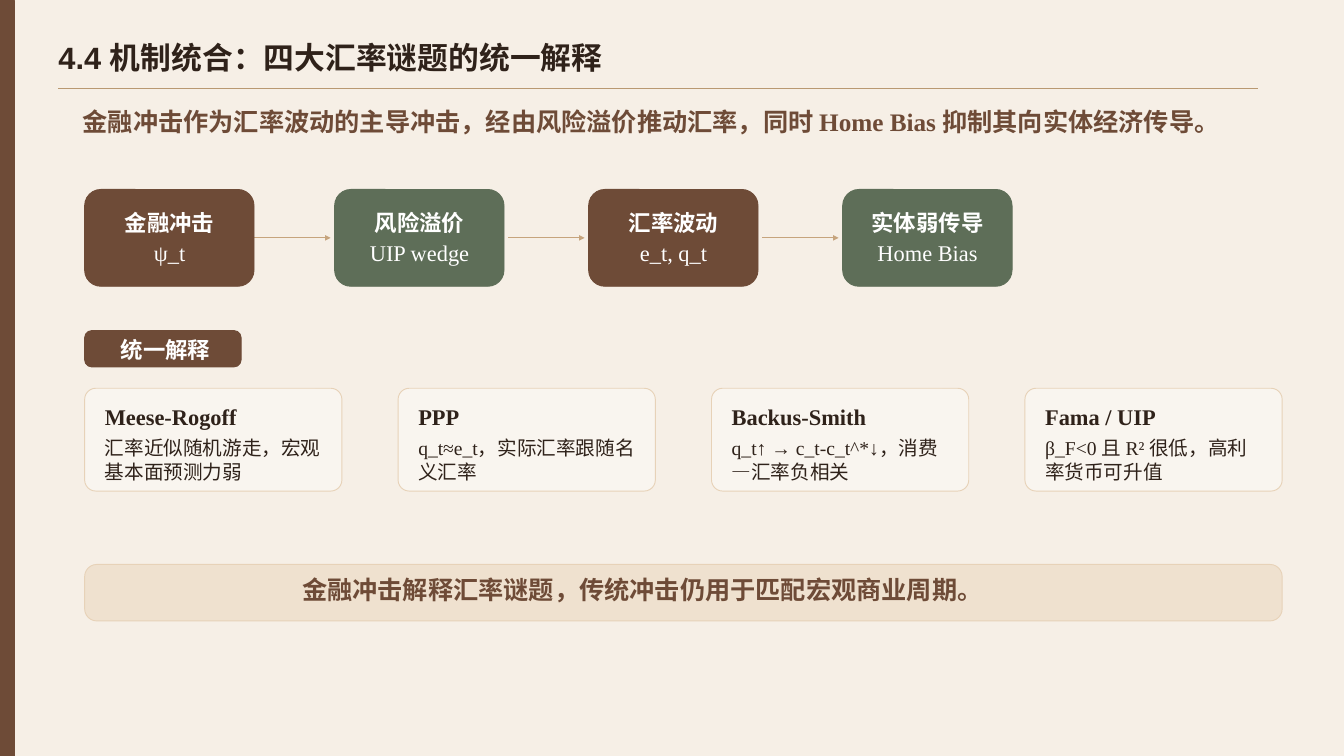
from pptx import Presentation
from pptx.dml.color import RGBColor
from pptx.enum.shapes import MSO_CONNECTOR, MSO_SHAPE
from pptx.enum.text import MSO_ANCHOR, PP_ALIGN
from pptx.oxml.ns import qn
from pptx.util import Inches, Pt
from lxml.etree import SubElement

BROWN = RGBColor(0x6E, 0x4B, 0x37)
GREEN = RGBColor(0x5E, 0x6E, 0x58)
INK = RGBColor(0x2F, 0x22, 0x1A)
WHITE = RGBColor(0xFF, 0xFF, 0xFF)
PAPER = RGBColor(0xF6, 0xEF, 0xE6)
CARD = RGBColor(0xF9, 0xF5, 0xEF)
SAND = RGBColor(0xEF, 0xE1, 0xCF)
EDGE = RGBColor(0xE7, 0xD2, 0xB8)
RULE = RGBColor(0xB9, 0x99, 0x72)
ARROW = RGBColor(0xC6, 0xA4, 0x7D)
SERIF = "Times New Roman"
CELL = 0.06  # inches in one grid column or row
LEFT, WIDE = 21, 297  # body margin and width in columns


def grid(*cells):
    return [Inches(n * CELL) for n in cells]


class Deck:
    def __init__(self):
        self.prs = Presentation()
        self.prs.slide_width, self.prs.slide_height = Inches(20), Inches(11.25)
        self.slide = self.prs.slides.add_slide(self.prs.slide_layouts[6])
        self.slide.background.fill.solid()
        self.slide.background.fill.fore_color.rgb = PAPER

    def box(self, x, y, w, h, fill, edge=None, round=None):
        kind = MSO_SHAPE.RECTANGLE if round is None else MSO_SHAPE.ROUNDED_RECTANGLE
        shape = self.slide.shapes.add_shape(kind, *grid(x, y, w, h))
        if round is not None:
            shape.adjustments[0] = round
        shape.shadow.inherit = False
        shape.fill.solid()
        shape.fill.fore_color.rgb = fill
        shape.line.color.rgb = edge or fill
        shape.line.width = Pt(1)

    def text(self, x, y, w, h, words, size, color, bold=False, font=SERIF,
             align=PP_ALIGN.LEFT, anchor=MSO_ANCHOR.MIDDLE, pad=(0, 0)):
        frame = self.slide.shapes.add_textbox(*grid(x, y, w, h)).text_frame
        frame.word_wrap = True
        frame.vertical_anchor = anchor
        frame.margin_left = frame.margin_right = Inches(pad[0])
        frame.margin_top = frame.margin_bottom = Inches(pad[1])
        para = frame.paragraphs[0]
        para.alignment = align
        run = para.add_run()
        run.text = words
        run.font.name, run.font.size, run.font.bold = font, Pt(size), bold
        run.font.color.rgb = color

    def line(self, x, y, end, color, width, head=False):
        line = self.slide.shapes.add_connector(
            MSO_CONNECTOR.STRAIGHT, *grid(x, y, end, y))
        line.line.color.rgb = color
        line.line.width = Pt(width)
        if head:
            SubElement(line.line._get_or_add_ln(), qn("a:tailEnd"), type="triangle")
        SubElement(line._element.spPr, qn("a:effectLst"))

    def node(self, x, y, w, h, fill, name, note):
        self.box(x, y, w, h, fill, round=0.167)
        self.text(x + 3.8, y + 5.5, w - 7.5, 5.2, name, 24, WHITE, True,
                  align=PP_ALIGN.CENTER)
        self.text(x + 3.8, y + 13.5, w - 7.5, 4.5, note, 24, WHITE,
                  align=PP_ALIGN.CENTER)

    def card(self, x, y, w, h, name, note):
        self.box(x, y, w, h, CARD, EDGE, 0.108)
        self.text(x + 5, y + 3.5, w - 10, 7, name, 24, INK, True)
        self.text(x + 5, y + 13, w - 10, 9.3, note, 21, INK)


def main():
    deck = Deck()

    # Side band, title and lead
    deck.box(0, 0, 3.5, 187.5, BROWN)
    deck.text(14.5, 8.5, 235, 11.5, "4.4 机制统合：四大汇率谜题的统一解释",
              33, INK, True, "Arial")
    deck.line(14.5, 22, 312, RULE, 1)
    deck.text(20.5, 27, 287.5, 6,
              "金融冲击作为汇率波动的主导冲击，经由风险溢价推动汇率，"
              "同时 Home Bias 抑制其向实体经济传导。", 27, BROWN, True)

    # Shock chain
    chain = [("金融冲击", "ψ_t"), ("风险溢价", "UIP wedge"),
             ("汇率波动", "e_t, q_t"), ("实体弱传导", "Home Bias")]
    step = 63
    for i in range(1, len(chain)):
        deck.line(i * step, 59, i * step + 19, ARROW, 1.2, head=True)
    for i, (name, note) in enumerate(chain):
        # Later nodes stand one column off the arrow tails
        x = LEFT + i * step - (i > 0)
        deck.node(x, 47, 42, 24, (BROWN, GREEN)[i % 2], name, note)

    # Section tag
    deck.box(LEFT, 82, 38.8, 9, BROWN, round=0.194)
    deck.text(LEFT + 1.5, 83.5, 35.8, 6.5, " 统一解释", 24, WHITE, True,
              align=PP_ALIGN.CENTER)

    # Four puzzles
    cards = [("Meese-Rogoff", "汇率近似随机游走，宏观基本面预测力弱"),
             ("PPP", "q_t≈e_t，实际汇率跟随名义汇率"),
             ("Backus-Smith", "q_t↑ → c_t-c_t^*↓，消费—汇率负相关"),
             ("Fama / UIP", "β_F<0 且 R² 很低，高利率货币可升值")]
    width = 63.8
    step = (WIDE - width) / (len(cards) - 1)
    for i, (name, note) in enumerate(cards):
        deck.card(LEFT + i * step, 96.3, width, 25.5, name, note)

    # Closing line
    deck.box(LEFT, 140, WIDE, 14, SAND, EDGE, 0.214)
    deck.text(73.3, 141.5, 225.7, 9.2,
              "金融冲击解释汇率谜题，传统冲击仍用于匹配宏观商业周期。",
              27, BROWN, True, anchor=MSO_ANCHOR.TOP, pad=(0.1, 0.05))

    deck.prs.save("out.pptx")


if __name__ == "__main__":
    main()
